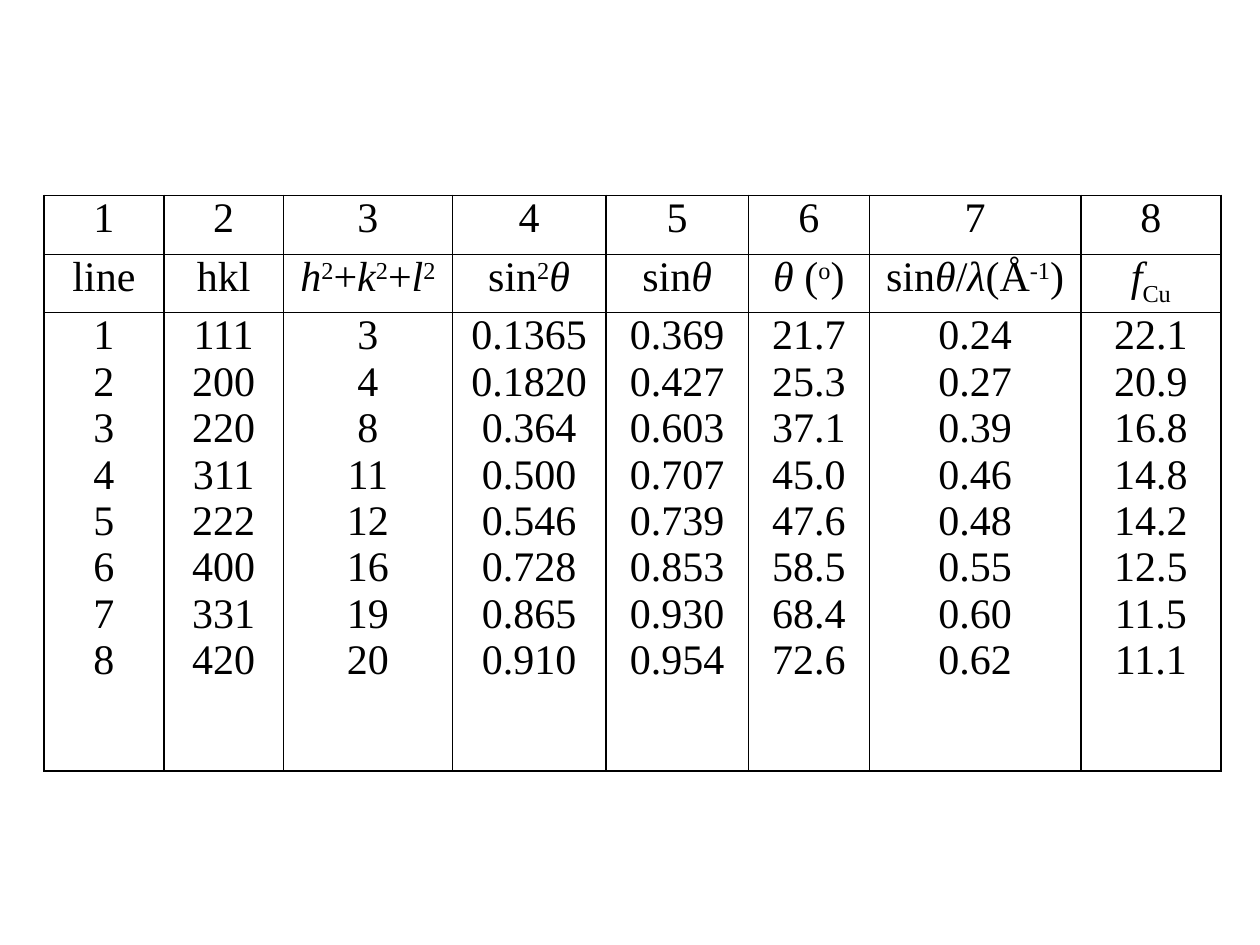
from lxml.etree import SubElement
from pptx import Presentation
from pptx.dml.color import RGBColor
from pptx.enum.text import PP_ALIGN
from pptx.oxml.ns import qn
from pptx.util import Inches, Pt

COLORS = {"ink": "000000"}
BASELINES = {"sup": "30000", "sub": "-25000"}

COL_WIDTHS = [0.95, 0.95, 1.34, 1.22, 1.13, 0.96, 1.68, 1.11]
ROW_HEIGHTS = [0.47, 0.46, 3.64]

HEADINGS = [
    [("line", "")],
    [("hkl", "")],
    [("h", "i"), ("2", "sup"), ("+", ""), ("k", "i"), ("2", "sup"),
     ("+", ""), ("l", "i"), ("2", "sup")],
    [("sin", ""), ("2", "sup"), ("θ", "i")],
    [("sin", ""), ("θ", "i")],
    [("θ ", "i"), ("(", ""), ("o", "sup"), (")", "")],
    [("sin", ""), ("θ", "i"), ("/", ""), ("λ", "i"), ("(Å", ""),
     ("-1", "sup"), (")", "")],
    [("f", "i"), ("Cu", "sub")],
]

LINES = [
    "1 111 3 0.1365 0.369 21.7 0.24 22.1",
    "2 200 4 0.1820 0.427 25.3 0.27 20.9",
    "3 220 8 0.364 0.603 37.1 0.39 16.8",
    "4 311 11 0.500 0.707 45.0 0.46 14.8",
    "5 222 12 0.546 0.739 47.6 0.48 14.2",
    "6 400 16 0.728 0.853 58.5 0.55 12.5",
    "7 331 19 0.865 0.930 68.4 0.60 11.5",
    "8 420 20 0.910 0.954 72.6 0.62 11.1",
]


class SlideBuilder:
    font = "Times New Roman"
    size = 24
    border = 1

    def __init__(self, s):
        self.s = s

    def table(self, left, top, widths, heights, rows):
        gf = self.s.shapes.add_table(
            len(heights), len(widths), Inches(left), Inches(top),
            Inches(sum(widths)), Inches(sum(heights)))
        tbl = gf.table
        tbl.first_row = tbl.horz_banding = False
        for col, width in zip(tbl.columns, widths):
            col.width = Inches(width)
        for row, height, contents in zip(tbl.rows, heights, rows):
            row.height = Inches(height)
            for cell, paragraphs in zip(row.cells, contents):
                self.cell(cell, paragraphs)

    def cell(self, cell, paragraphs):
        cell.margin_left = cell.margin_right = Inches(0.02)
        cell.margin_top = cell.margin_bottom = 0
        self.borders(cell)
        cell.fill.background()
        tf = cell.text_frame
        for i, runs in enumerate(paragraphs):
            p = tf.add_paragraph() if i else tf.paragraphs[0]
            self.paragraph(p, runs)

    def borders(self, cell):
        tcPr = cell._tc.get_or_add_tcPr()
        for side in ("lnL", "lnR", "lnT", "lnB"):
            ln = SubElement(tcPr, qn(f"a:{side}"), w=str(Pt(self.border)))
            fill = SubElement(ln, qn("a:solidFill"))
            SubElement(fill, qn("a:srgbClr"), val=COLORS["ink"])

    def paragraph(self, p, runs):
        p.alignment = PP_ALIGN.CENTER
        p.font.name = self.font
        p.font.size = Pt(self.size)
        p.font.color.rgb = RGBColor.from_string(COLORS["ink"])
        for text, style in runs:
            r = p.add_run()
            r.text = text
            if style == "i":
                r.font.italic = True
            elif style in BASELINES:
                r._r.get_or_add_rPr().set("baseline", BASELINES[style])


def main():
    prs = Presentation()
    prs.slide_width, prs.slide_height = Inches(10), Inches(7.5)
    builder = SlideBuilder(prs.slides.add_slide(prs.slide_layouts[6]))
    numbers = [[[(str(n), "")]] for n in range(1, len(COL_WIDTHS) + 1)]
    headings = [[runs] for runs in HEADINGS]
    columns = zip(*(line.split() for line in LINES))
    values = [[[(value, "")] for value in column] for column in columns]
    builder.table(0.35, 1.55, COL_WIDTHS, ROW_HEIGHTS,
                  [numbers, headings, values])
    prs.save("out.pptx")


if __name__ == "__main__":
    main()
